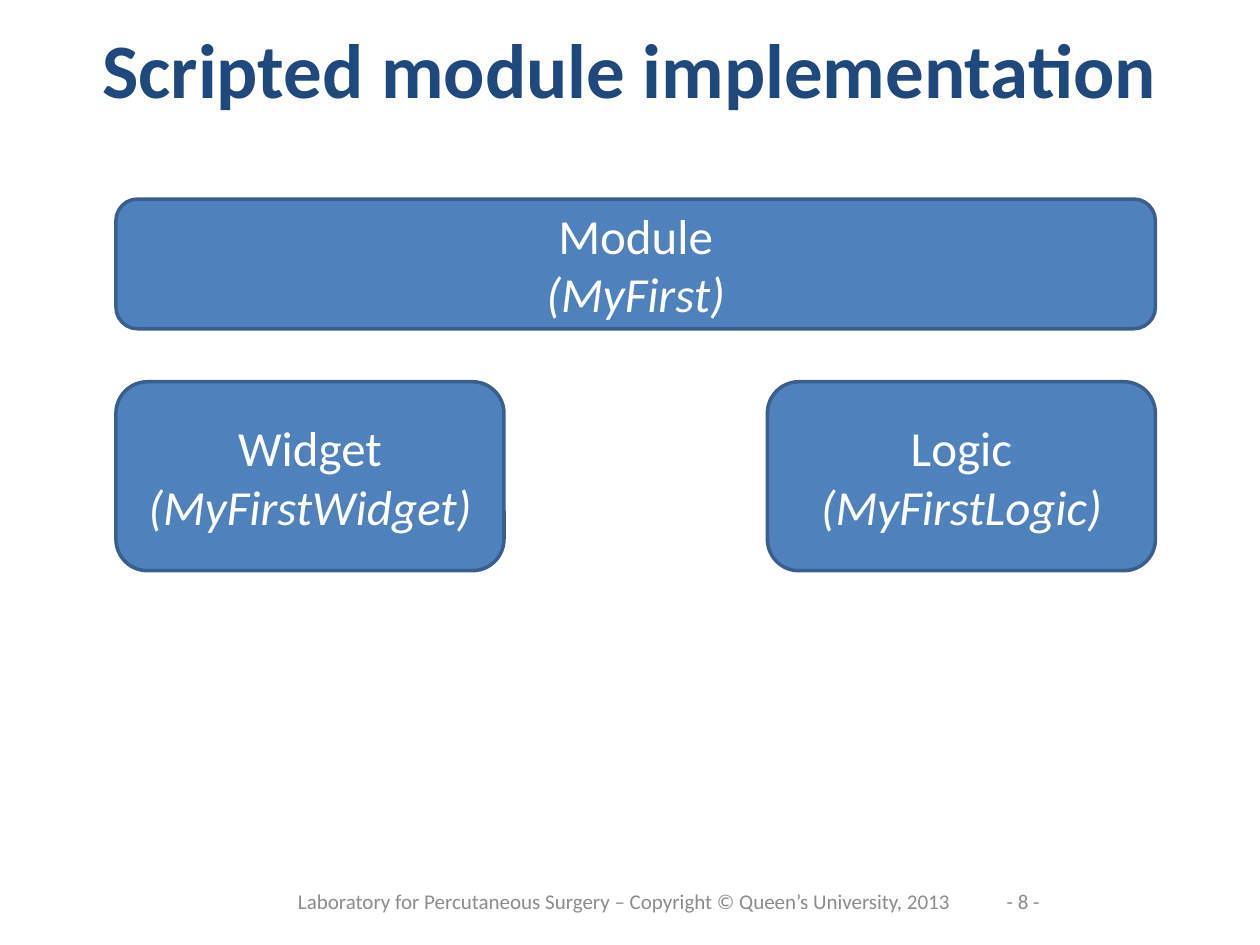
import pptx
import pptx.dml.color
import pptx.enum.shapes
import pptx.enum.text
import pptx.util

COLORS = {
    "title": "1F497D",
    "box": "4F81BD",
    "outline": "3A5F8C",
    "box text": "FFFFFF",
    "footer": "8C8C8C",
}
inches = pptx.util.Inches


def color(name):
    return pptx.dml.color.RGBColor.from_string(COLORS[name])


def write(shape, lines, size, color_name, bold=False):
    """Fill a shape with centred lines; every line after the first is italic."""
    frame = shape.text_frame
    frame.word_wrap = True
    frame.vertical_anchor = pptx.enum.text.MSO_ANCHOR.MIDDLE
    for index, line in enumerate(lines):
        para = frame.add_paragraph() if index else frame.paragraphs[0]
        para.alignment = pptx.enum.text.PP_ALIGN.CENTER
        span = para.add_run()
        span.text = line
        span.font.name = "Calibri"
        span.font.size = pptx.util.Pt(size)
        span.font.bold = bold
        span.font.italic = index > 0
        span.font.color.rgb = color(color_name)


deck = pptx.Presentation()
deck.slide_width, deck.slide_height = inches(10), inches(7.5)
page = deck.slides.add_slide(deck.slide_layouts[5])

title = page.shapes.title
title.left, title.top = inches(0.5), inches(0)
title.width, title.height = inches(9), inches(1.08)
write(title, ["Scripted module implementation"], 44, "title", bold=True)

# The module spans the full width; its two parts sit at either end below it.
left, full_width, part_width = 0.92, 8.25, 3.08
right_part = left + full_width - part_width
module_row, part_row = (1.58, 1.03), (3.03, 1.5)
boxes = [
    (left, part_width, part_row, "Widget", "(MyFirstWidget)"),
    (right_part, part_width, part_row, "Logic", "(MyFirstLogic)"),
    (left, full_width, module_row, "Module", "(MyFirst)"),
]
for x, width, (top, height), role, class_name in boxes:
    box = page.shapes.add_shape(
        pptx.enum.shapes.MSO_SHAPE.ROUNDED_RECTANGLE,
        inches(x), inches(top), inches(width), inches(height))
    box.shadow.inherit = False
    box.fill.solid()
    box.fill.fore_color.rgb = color("box")
    box.line.color.rgb = color("outline")
    box.line.width = pptx.util.Pt(2)
    write(box, [role, class_name], 28, "box text")

footer_left, footer_width = 2.08, 5.75
footers = [
    (footer_left, footer_width,
     "Laboratory for Percutaneous Surgery – Copyright © Queen’s University, 2013"),
    (footer_left + footer_width, 0.58, "- 8 -"),
]
for x, width, words in footers:
    footer = page.shapes.add_textbox(inches(x), inches(6.95), inches(width), inches(0.4))
    write(footer, [words], 12, "footer")

deck.save("out.pptx")
